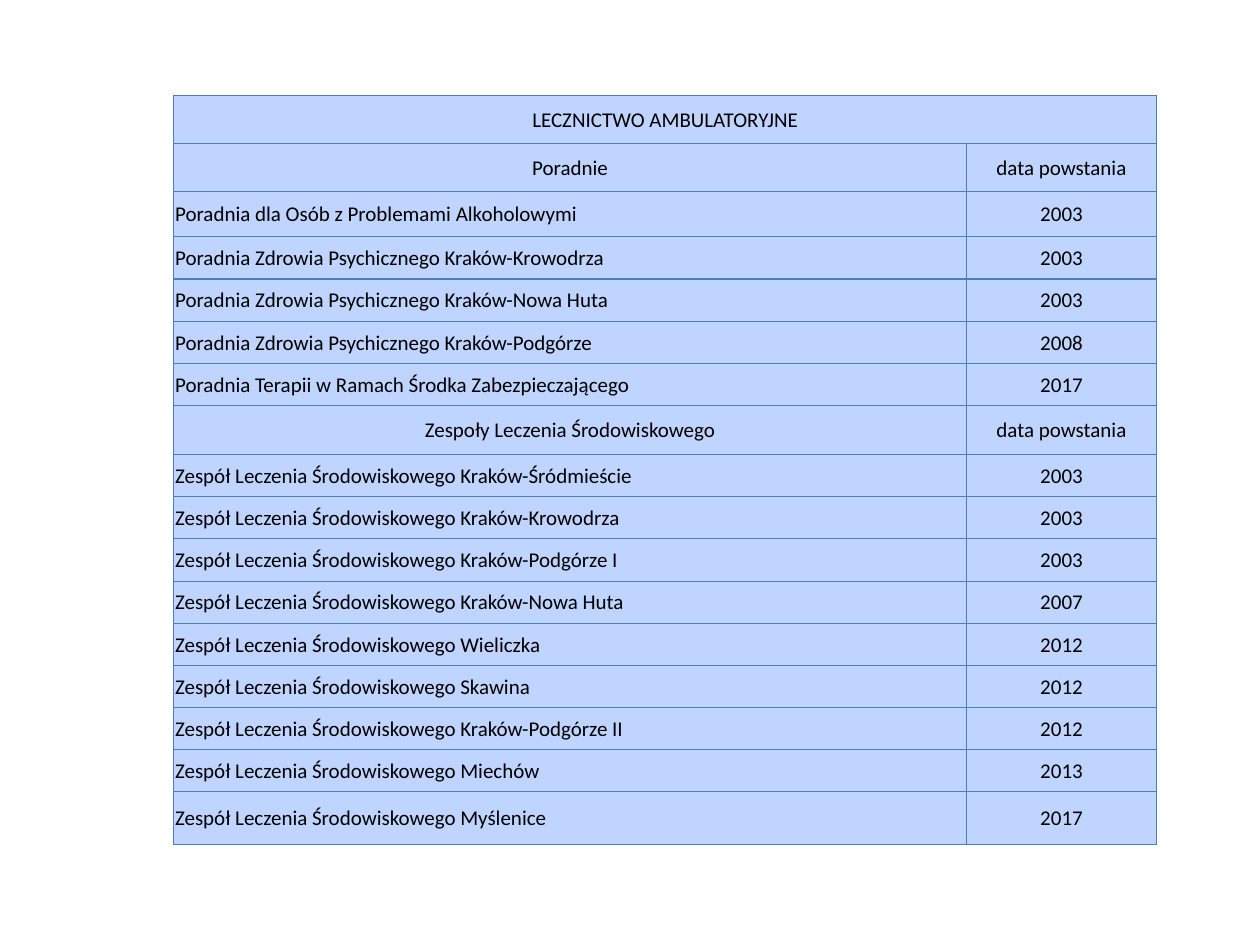
from lxml import etree
from pptx import Presentation
from pptx import util as u
from pptx.dml.color import RGBColor
from pptx.enum import text
from pptx.oxml import ns

BLACK = RGBColor(0x00, 0x00, 0x00)
PALE_BLUE = RGBColor(0xBF, 0xD4, 0xFF)
BORDER_BLUE = RGBColor(0x4B, 0x7E, 0xBC)

TITLE = "LECZNICTWO AMBULATORYJNE"
DATE = "data powstania"
CLINIC = "Poradnia Zdrowia Psychicznego Kraków-"
TEAM = "Zespół Leczenia Środowiskowego "
CLINICS = [
    ("Poradnia dla Osób z Problemami Alkoholowymi", "2003"),
    (CLINIC + "Krowodrza", "2003"),
    (CLINIC + "Nowa Huta", "2003"),
    (CLINIC + "Podgórze", "2008"),
    ("Poradnia Terapii w Ramach Środka Zabezpieczającego", "2017"),
]
TEAMS = [(TEAM + place, year) for place, year in [
    ("Kraków-Śródmieście", "2003"),
    ("Kraków-Krowodrza", "2003"),
    ("Kraków-Podgórze I", "2003"),
    ("Kraków-Nowa Huta", "2007"),
    ("Wieliczka", "2012"),
    ("Skawina", "2012"),
    ("Kraków-Podgórze II", "2012"),
    ("Miechów", "2013"),
    ("Myślenice", "2017"),
]]
HEADINGS = [(TITLE, ""), ("Poradnie", DATE), ("Zespoły Leczenia Środowiskowego", DATE)]
ROWS = HEADINGS[:2] + CLINICS + HEADINGS[2:] + TEAMS
HEIGHTS = [3.8, 3.8, 3.6] + [3.35] * 4 + [3.9] + [3.35] * 8 + [4.15]


def write(tf, content, font="Calibri", size=12, color=BLACK, align=text.PP_ALIGN.LEFT):
    p = tf.paragraphs[0]
    p.alignment = align
    r = p.add_run()
    r.text = content
    r.font.name, r.font.size = font, u.Pt(size)
    r.font.color.rgb = color


class Deck:
    """Holds the style and the current slide, measured on a grid of 100 columns by 75 rows."""

    def __init__(self, width=10, height=7.5):
        self.prs = Presentation()
        self.prs.slide_width, self.prs.slide_height = u.Inches(width), u.Inches(height)
        self.s = self.prs.slides.add_slide(self.prs.slide_layouts[6])
        self.fill, self.line, self.line_width = PALE_BLUE, BORDER_BLUE, 0.75

    def x(self, columns):
        return int(self.prs.slide_width * columns / 100)

    def y(self, rows):
        return int(self.prs.slide_height * rows / 75)

    def border(self, cell):
        props = cell._tc.get_or_add_tcPr()
        for i, side in enumerate(("lnL", "lnR", "lnT", "lnB")):
            ln = etree.Element(ns.qn(f"a:{side}"), w=str(u.Pt(self.line_width)))
            solid = etree.SubElement(ln, ns.qn("a:solidFill"))
            etree.SubElement(solid, ns.qn("a:srgbClr"), val=str(self.line))
            props.insert(i, ln)

    def cell(self, cell, content, align):
        cell.fill.solid()
        cell.fill.fore_color.rgb = self.fill
        cell.margin_left = cell.margin_right = cell.margin_top = u.Inches(0.01)
        cell.margin_bottom = 0
        cell.vertical_anchor = text.MSO_ANCHOR.MIDDLE
        self.border(cell)
        if content:
            write(cell.text_frame, content, align=align)

    def table(self, left, top, widths, heights, rows, headings):
        frame = self.s.shapes.add_table(
            len(rows), len(widths), self.x(left), self.y(top),
            self.x(sum(widths)), self.y(sum(heights)))
        table = frame.table
        for column, width in zip(table.columns, widths):
            column.width = self.x(width)
        for row, height, values in zip(table.rows, heights, rows):
            row.height = self.y(height)
            for i, (cell, value) in enumerate(zip(row.cells, values)):
                centred = i > 0 or values in headings
                self.cell(cell, value, text.PP_ALIGN.CENTER if centred else text.PP_ALIGN.LEFT)
        table.cell(0, 0).merge(table.cell(0, len(widths) - 1))


def main():
    deck = Deck()
    deck.table(13.8, 7.6, [62.9, 15.1], HEIGHTS, ROWS, HEADINGS)
    deck.prs.save("out.pptx")


if __name__ == "__main__":
    main()
